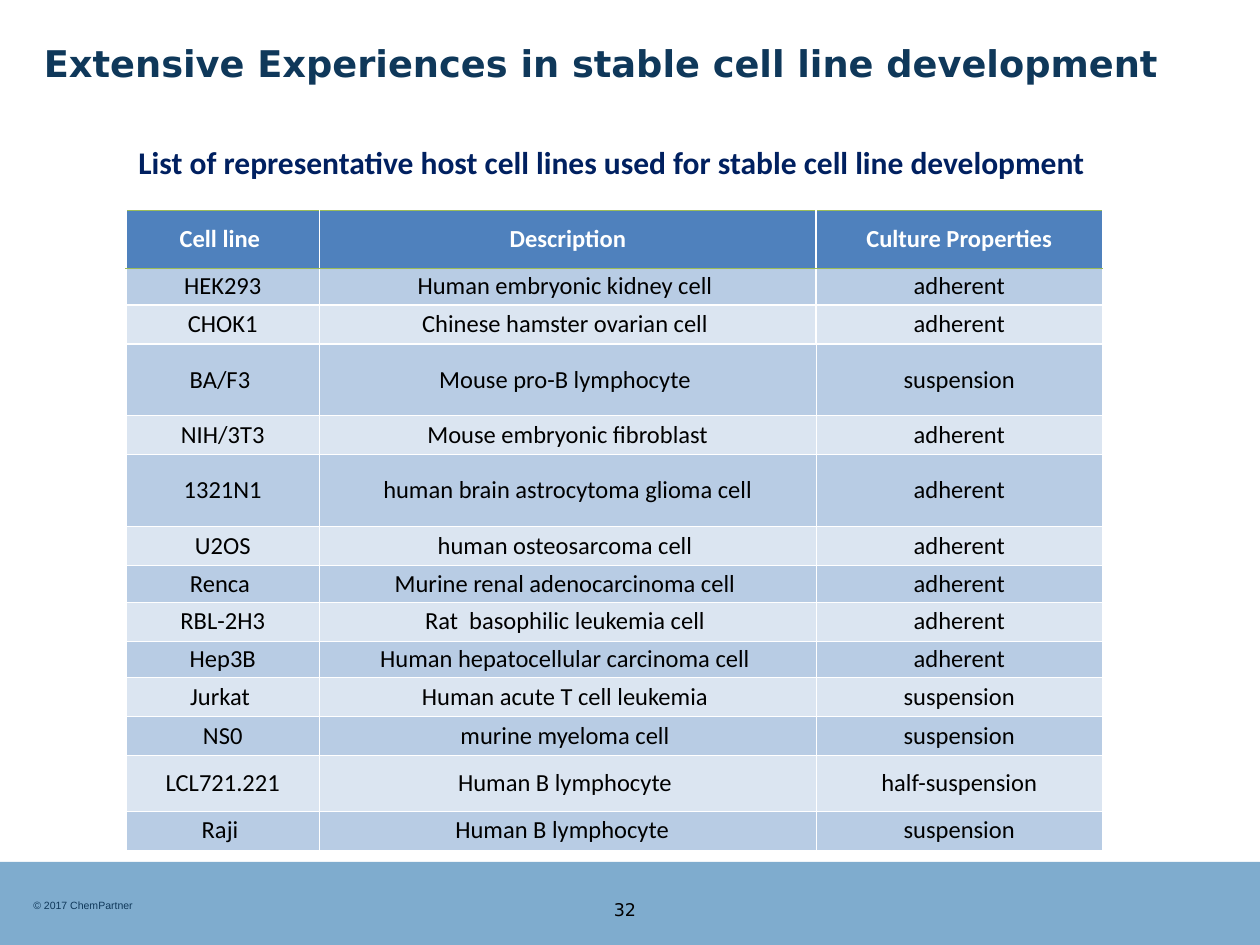
import lxml.etree
import pptx
import pptx.dml.color
import pptx.enum.shapes
import pptx.enum.text
import pptx.oxml.ns
import pptx.util

Pt = pptx.util.Pt
RGBColor = pptx.dml.color.RGBColor
Align = pptx.enum.text.PP_ALIGN
Anchor = pptx.enum.text.MSO_ANCHOR
qn = pptx.oxml.ns.qn

WHITE = RGBColor(0xFF, 0xFF, 0xFF)
BLACK = RGBColor(0, 0, 0)
NAVY = RGBColor(0x0F, 0x38, 0x5A)
DARK_BLUE = RGBColor(0x00, 0x20, 0x60)
FOOTER_BLUE = RGBColor(0x00, 0x5B, 0x9E)
HEADER_BLUE = RGBColor(0x4F, 0x81, 0xBD)
GREEN = RGBColor(0x9B, 0xBB, 0x59)
BANDS = (RGBColor(0xB8, 0xCC, 0xE4), RGBColor(0xDB, 0xE5, 0xF1))

HEADINGS = ("Cell line ", "Description", "Culture Properties")
# Row height, cell line, description, culture properties
CELL_LINES = (
    (20.9, "HEK293", "Human embryonic kidney cell ", "adherent"),
    (22.3, "CHOK1", "Chinese hamster ovarian cell ", "adherent"),
    (41, "BA/F3 ", "Mouse pro-B lymphocyte ", "suspension"),
    (22.3, "NIH/3T3", "Mouse embryonic fibroblast", "adherent"),
    (41, "1321N1", "human brain astrocytoma glioma cell", "adherent"),
    (22.3, "U2OS", "human osteosarcoma cell ", "adherent"),
    (21, "Renca ", "Murine renal adenocarcinoma cell ", "adherent"),
    (22.3, "RBL-2H3", "Rat  basophilic leukemia cell ", "adherent"),
    (21, "Hep3B", "Human hepatocellular carcinoma cell ", "adherent"),
    (22.3, "Jurkat ", "Human acute T cell leukemia ", "suspension"),
    (22.3, "NS0", "murine myeloma cell ", "suspension"),
    (31.7, "LCL721.221", "Human B lymphocyte ", "half-suspension"),
    (22.3, "Raji ", "Human B lymphocyte  ", "suspension"),
)


class SlideBuilder:
    """Holds the current slide and the style of its elements."""

    table_font = "Calibri"
    table_size = 14

    def __init__(self, slide):
        self.slide = slide

    def add_span(self, frame, text, size, font, color, bold=False, align=Align.LEFT):
        para = frame.paragraphs[0]
        para.alignment = align
        span = para.add_run()
        span.text = text
        span.font.size = Pt(size)
        span.font.name = font
        span.font.bold = bold
        span.font.color.rgb = color

    def text(self, left, top, width, height, *content, anchor=Anchor.TOP, **style):
        box = self.slide.shapes.add_textbox(Pt(left), Pt(top), Pt(width), Pt(height))
        box.text_frame.word_wrap = True
        box.text_frame.vertical_anchor = anchor
        self.add_span(box.text_frame, *content, **style)

    def band(self, left, top, width, height, color, opacity):
        band = self.slide.shapes.add_shape(
            pptx.enum.shapes.MSO_SHAPE.RECTANGLE,
            Pt(left), Pt(top), Pt(width), Pt(height))
        band.shadow.inherit = False
        band.line.fill.background()
        band.fill.solid()
        band.fill.fore_color.rgb = color
        tint = band._element.spPr.find(qn("a:solidFill"))[0]
        lxml.etree.SubElement(tint, qn("a:alpha"), val=str(opacity * 1000))

    def borders(self, cell, edges):
        """Set borders from (side, colour, width) in the order L, R, T, B."""
        properties = cell._tc.get_or_add_tcPr()
        for index, (side, color, width) in enumerate(edges):
            line = lxml.etree.Element(qn(f"a:ln{side}"), w=str(int(Pt(width))))
            fill = lxml.etree.SubElement(line, qn("a:solidFill"))
            lxml.etree.SubElement(fill, qn("a:srgbClr"), val=str(color))
            properties.insert(index, line)

    def cell(self, cell, text, fill, color, bold, edges):
        cell.margin_left = cell.margin_right = 0
        cell.margin_top = cell.margin_bottom = 0
        cell.vertical_anchor = Anchor.MIDDLE
        cell.fill.solid()
        cell.fill.fore_color.rgb = fill
        self.add_span(cell.text_frame, text, self.table_size, self.table_font,
                      color, bold, Align.CENTER)
        self.borders(cell, edges)

    def table(self, left, top, widths, header_height, headings, body):
        heights = [header_height] + [row[0] for row in body]
        rows = [headings] + [row[1:] for row in body]
        table = self.slide.shapes.add_table(
            len(rows), len(widths), Pt(left), Pt(top),
            Pt(sum(widths)), Pt(sum(heights))).table
        table.first_row = table.horz_banding = False
        for column, width in zip(table.columns, widths):
            column.width = Pt(width)
        for number, (height, texts) in enumerate(zip(heights, rows)):
            table.rows[number].height = Pt(height)
            header = number == 0
            fill = HEADER_BLUE if header else BANDS[(number - 1) % 2]
            weight = 1 if number < 3 else 0.5
            top_edge = (GREEN, 0.5) if number < 2 else (WHITE, weight)
            bottom_edge = (GREEN, 0.5) if header else (WHITE, weight)
            edges = (("L", WHITE, weight), ("R", WHITE, weight),
                     ("T", *top_edge), ("B", *bottom_edge))
            for position, text in enumerate(texts):
                self.cell(table.cell(number, position), text, fill,
                          WHITE if header else BLACK, header, edges)


def main():
    deck = pptx.Presentation()
    deck.slide_width, deck.slide_height = Pt(720), Pt(540)
    page = SlideBuilder(deck.slides.add_slide(deck.slide_layouts[6]))

    page.band(0, 492.5, 720, 47.5, FOOTER_BLUE, opacity=50)
    page.text(12, 510, 360, 14.4, "© 2017 ChemPartner", 6, "Arial", NAVY)
    page.text(319, 510, 76.3, 20, "32", 10, "DejaVu Sans", BLACK, align=Align.CENTER)
    page.text(18, 0, 678, 72, "Extensive Experiences in stable cell line development",
              21, "DejaVu Sans", NAVY, bold=True, anchor=Anchor.MIDDLE)
    page.table(72, 120, (110.6, 283.8, 163.6), 33.3, HEADINGS, CELL_LINES)
    page.text(72, 78, 594, 29,
              "List of representative host cell lines used for stable cell line development",
              18, "Calibri", DARK_BLUE, bold=True)

    deck.save("out.pptx")


if __name__ == "__main__":
    main()
